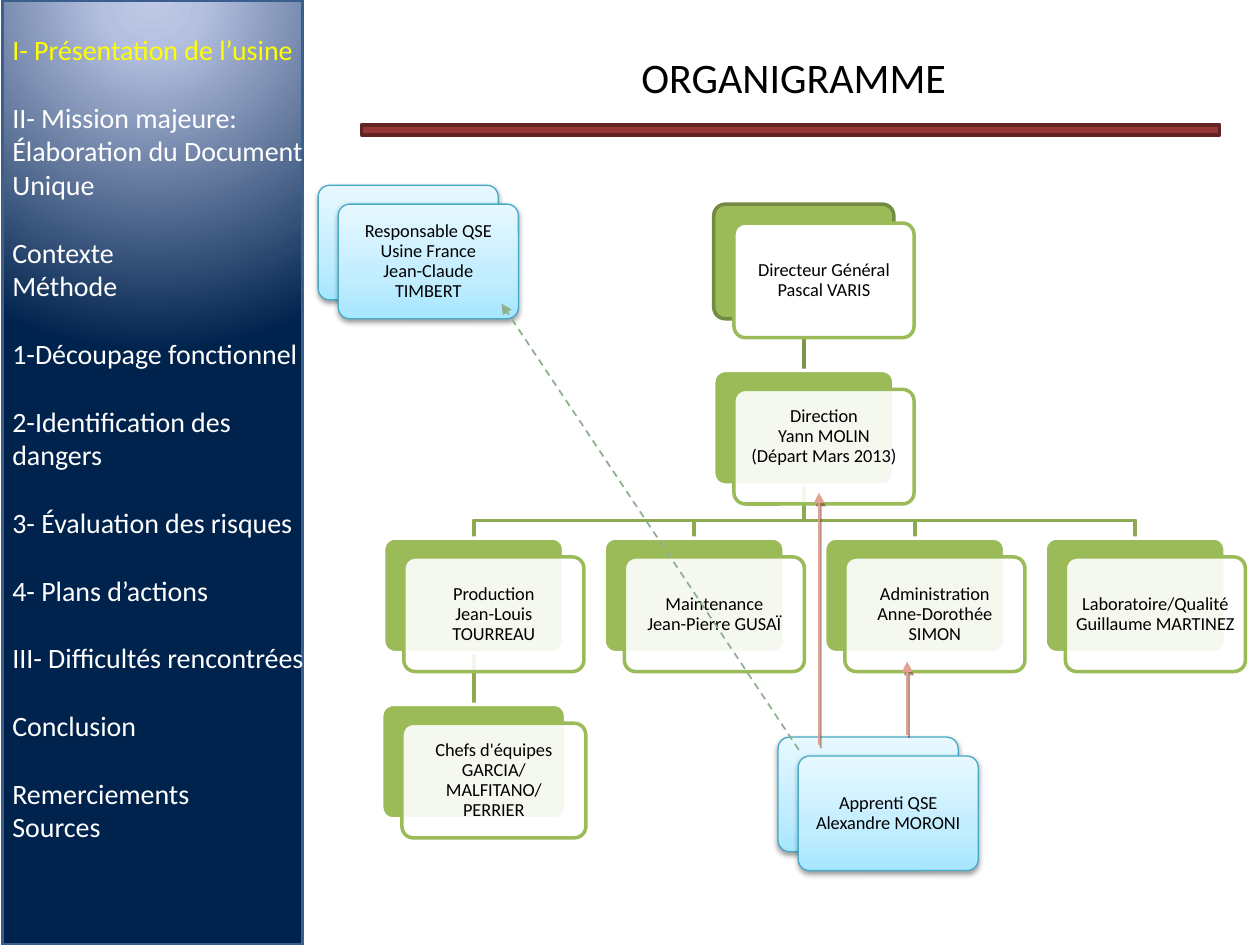
from lxml import etree
from pptx import Presentation
from pptx.dml.color import RGBColor
from pptx.enum.dml import MSO_LINE
from pptx.enum.shapes import MSO_CONNECTOR, MSO_SHAPE
from pptx.enum.text import MSO_ANCHOR, PP_ALIGN
from pptx.oxml import parse_xml
from pptx.oxml.ns import qn
from pptx.util import Inches, Pt

RECT, ROUND = MSO_SHAPE.RECTANGLE, MSO_SHAPE.ROUNDED_RECTANGLE
STRAIGHT, DASH = MSO_CONNECTOR.STRAIGHT, MSO_LINE.DASH
CENTER, LEFT = PP_ALIGN.CENTER, PP_ALIGN.LEFT
MIDDLE = MSO_ANCHOR.MIDDLE
NS = 'xmlns:a="http://schemas.openxmlformats.org/drawingml/2006/main"'
FONT = "Calibri"
HEX = {
    "black": "000000", "white": "FFFFFF", "yellow": "FFFF00",
    "green": "9BBB59", "olive": "738A42", "link": "8DAA51", "stem": "7C9647",
    "edge": "46AAC5", "side": "3A5F8C", "bar": "953735", "rim": "632523",
    "dash": "8FB08C", "arrow": "E3A191", "glow": "6F2C1C",
}
NAVY = [(0, "BFC9E5"), (10, "B5C0E0"), (71, "00234D")]
SKY = [(0, "A7E6FF"), (35, "C1EDFF"), (100, "E7F8FF")]
RADIAL = '<a:path path="circle"><a:fillToRect l="50000" r="50000" b="100000"/></a:path>'
UPWARD = '<a:lin ang="16200000" scaled="0"/>'
SOFT = ("black", 38, 3.1, 1.6, 90)
GLOW = ("glow", 50, 0, 2.2, 63)

MENU = [
    ["I- Présentation de l’usine"],
    ["II- Mission majeure: Élaboration du Document Unique"],
    ["Contexte", "Méthode"],
    ["1-Découpage fonctionnel"],
    ["2-Identification des dangers"],
    ["3- Évaluation des risques"],
    ["4- Plans d’actions"],
    ["III- Difficultés rencontrées"],
    ["Conclusion"],
    ["Remerciements", "Sources"],
]
TEAMS = [
    "Production\nJean-Louis TOURREAU",
    "Maintenance\nJean-Pierre GUSAÏ",
    "Administration\nAnne-Dorothée SIMON",
    "Laboratoire/Qualité\nGuillaume MARTINEZ",
]
QSE = [
    (6.89, 5.85, "Apprenti QSE\nAlexandre MORONI"),
    (3.24, 1.47, "Responsable QSE Usine France\nJean-Claude\nTIMBERT"),
]
ARROWS = [
    ((6.34, 5.95), (3.98, 2.41), "dash", None),
    ((6.5, 5.91), (6.5, 3.91), "arrow", GLOW),
    ((7.2, 5.83), (7.2, 5.25), "arrow", GLOW),
]
MID, FIRST, PITCH = 6.38, 3.76, 1.75
TOP, DIRECT, TEAM, CHIEF = 1.62, 2.94, 4.27, 5.59
WIDE, HIGH, BEND = 1.43, 0.91, 4.13


def color(name):
    return RGBColor.from_string(HEX[name])


def stroke(item, name, width):
    item.line.color.rgb = color(name)
    item.line.width = Pt(width)


def shade(item, look=None):
    effect = etree.SubElement(item._element.spPr, qn("a:effectLst"))
    if look:
        name, alpha, blur, dist, angle = look
        effect.append(parse_xml(
            f'<a:outerShdw {NS} blurRad="{Pt(blur)}" dist="{Pt(dist)}" '
            f'dir="{angle * 60000}" rotWithShape="0"><a:srgbClr val="{HEX[name]}">'
            f'<a:alpha val="{alpha * 1000}"/></a:srgbClr></a:outerShdw>'))


def blend(item, stops, course):
    item.fill.background()
    marks = "".join(f'<a:gs pos="{pos * 1000}"><a:srgbClr val="{tint}"/></a:gs>'
                    for pos, tint in stops)
    blank = item._element.spPr.find(qn("a:noFill"))
    blank.getparent().replace(blank, parse_xml(
        f'<a:gradFill {NS} rotWithShape="1"><a:gsLst>{marks}</a:gsLst>{course}</a:gradFill>'))


def block(slide, kind, box, fill, edge, width, look=None):
    item = slide.shapes.add_shape(kind, *map(Inches, box))
    if kind == ROUND:
        item.adjustments[0] = 0.1
    if isinstance(fill, str):
        item.fill.solid()
        item.fill.fore_color.rgb = color(fill)
    else:
        blend(item, *fill)
    stroke(item, edge, width)
    shade(item, look)
    return item


def style(para, size, name, align):
    para.font.name, para.font.size = FONT, Pt(size)
    para.font.color.rgb = color(name)
    para.alignment = align


def card(slide, mid, top, text, back, front, width=WIDE, look=None, lift=0):
    left = mid - width / 2
    block(slide, ROUND, (left, top, width, HIGH), *back, look)
    face = block(slide, ROUND, (left + 0.16, top + 0.15, width, HIGH), *front, look)
    frame = face.text_frame
    frame.word_wrap, frame.vertical_anchor = True, MIDDLE
    frame.margin_left = frame.margin_right = frame.margin_top = Inches(0.04)
    frame.margin_bottom = Inches(0.04 + lift)
    para = frame.paragraphs[0]
    para.text, para.line_spacing = text, 0.9
    style(para, 10.5, "black", CENTER)
    return face


def line(slide, start, end, name, width, look=None):
    item = slide.shapes.add_connector(STRAIGHT, *map(Inches, start + end))
    stroke(item, name, width)
    shade(item, look)
    return item


def links(slide):
    for col in range(len(TEAMS)):
        mid = FIRST + col * PITCH
        path = slide.shapes.build_freeform(Inches(MID), Inches(DIRECT + HIGH), 1.0)
        path.add_line_segments(
            [(Inches(x), Inches(y)) for x, y in ((MID, BEND), (mid, BEND), (mid, TEAM))],
            close=False)
        item = path.convert_to_shape()
        item.fill.background()
        stroke(item, "link", 2)
        shade(item)
    line(slide, (FIRST, TEAM + HIGH), (FIRST, CHIEF), "link", 2)
    line(slide, (MID, TOP + HIGH), (MID, DIRECT), "stem", 2)


def chart(slide):
    links(slide)
    sky = ((SKY, UPWARD), "edge", 0.75)
    for mid, top, text in QSE:
        card(slide, mid, top, text, sky, sky, look=SOFT)
    back, front = ("green", "white", 2), ("white", "green", 2)
    card(slide, MID, TOP, "Directeur Général\nPascal VARIS", ("green", "olive", 2), front)
    faces = [
        card(slide, MID, DIRECT, "Direction\nYann MOLIN\n(Départ Mars 2013)",
             back, front, lift=0.16),
        card(slide, FIRST, CHIEF, "Chefs d'équipes\nGARCIA/\nMALFITANO/\nPERRIER",
             back, front, width=1.46),
    ]
    for col, text in enumerate(TEAMS):
        faces.append(card(slide, FIRST + col * PITCH, TEAM, text, back, front))
    for face in faces:
        tint = face._element.spPr.find(qn("a:solidFill"))[0]
        etree.SubElement(tint, qn("a:alpha"), val="90000")
    for start, end, name, look in ARROWS:
        item = line(slide, start, end, name, 1, look)
        if name == "dash":
            item.line.dash_style = DASH
        etree.SubElement(item.line._get_or_add_ln(), qn("a:tailEnd"), type="triangle")


def menu(slide):
    frame = slide.shapes.add_textbox(*map(Inches, (0, 0.21, 2.64, 6.83))).text_frame
    frame.word_wrap = True
    for group, items in enumerate(MENU):
        for spot, text in enumerate(items):
            fresh = group or spot
            para = frame.add_paragraph() if fresh else frame.paragraphs[0]
            para.text = text
            style(para, 16, "white" if fresh else "yellow", LEFT)
            if group and not spot:
                para.space_before = Pt(19.5)


def main():
    """Build the organisation chart slide."""
    deck = Presentation()
    deck.slide_width, deck.slide_height = Inches(10), Inches(7.5)
    slide = deck.slides.add_slide(deck.slide_layouts[5])
    block(slide, RECT, (0.02, 0, 2.38, 7.5), (NAVY, RADIAL), "side", 2)
    block(slide, RECT, (2.87, 0.99, 6.81, 0.08), "bar", "rim", 2)
    title = slide.shapes.title
    title.left, title.top, title.width, title.height = map(Inches, (3.82, 0.36, 4.96, 0.5))
    title.text_frame.text = "ORGANIGRAMME"
    title.text_frame.vertical_anchor = MIDDLE
    style(title.text_frame.paragraphs[0], 24, "black", CENTER)
    chart(slide)
    menu(slide)
    deck.save("out.pptx")


if __name__ == "__main__":
    main()
